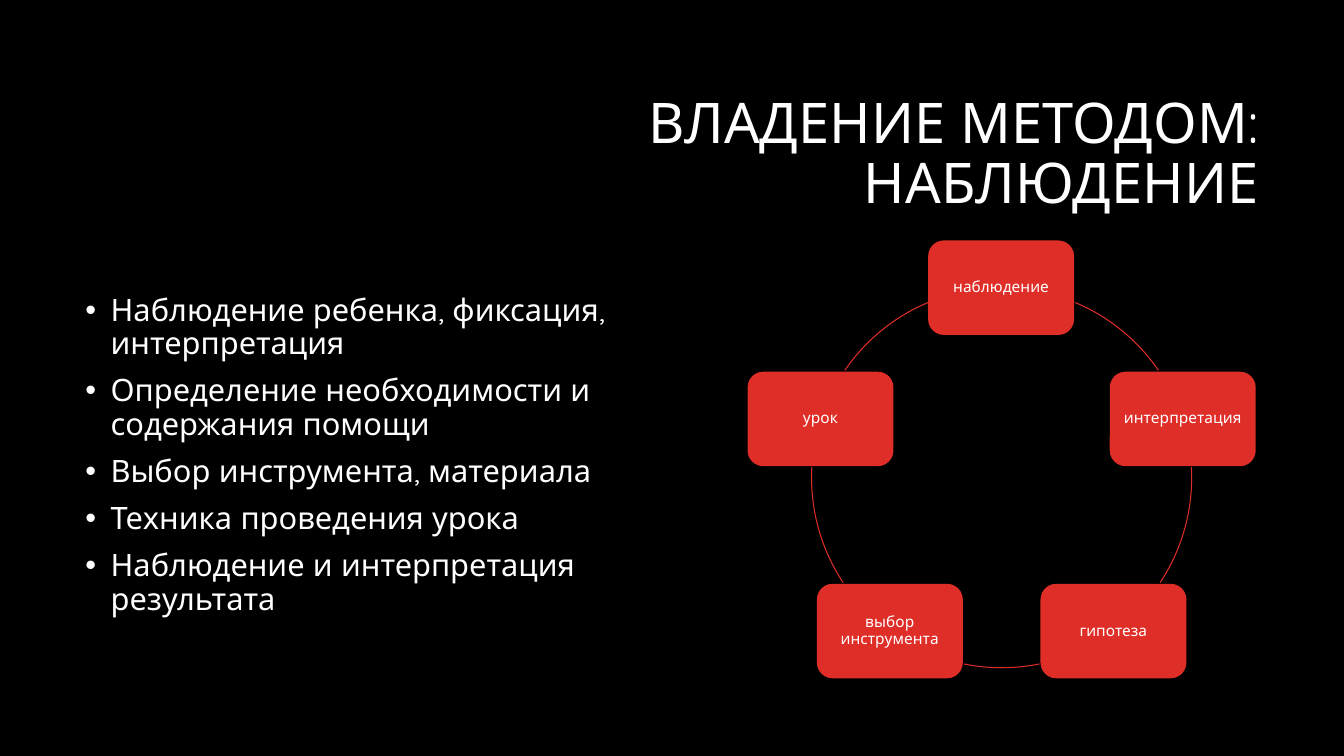
"""Build a slide with a bullet list and a five-step observation cycle."""
from math import cos, radians, sin

from lxml import etree
from pptx import Presentation
from pptx.dml.color import RGBColor
from pptx.enum.shapes import MSO_SHAPE as Shape
from pptx.enum.text import MSO_ANCHOR as Anchor, MSO_AUTO_SIZE as AutoSize, PP_ALIGN as Align
from pptx.oxml.ns import qn
from pptx.util import Pt

PX = 9525
WHITE, RED, BLACK = "FFFFFF", "DF2E28", "000000"


def color(value):
    return RGBColor.from_string(value)


def write(para, text, size, align):
    para.alignment = align
    para.line_spacing = 0.9
    span = para.add_run()
    span.text = text
    span.font.name = "Quicksand"
    span.font.size = Pt(size)
    span.font.color.rgb = color(WHITE)


deck = Presentation()
deck.slide_width, deck.slide_height = 1280 * PX, 720 * PX
page = deck.slides.add_slide(deck.slide_layouts[5])
page.background.fill.solid()
page.background.fill.fore_color.rgb = color(BLACK)

title = page.shapes.title
title.left, title.top, title.width, title.height = 304 * PX, 80 * PX, 904 * PX, 136 * PX
frame = title.text_frame
frame.word_wrap = True
frame.auto_size = AutoSize.NONE
frame.vertical_anchor = Anchor.MIDDLE
write(frame.paragraphs[0], "ВЛАДЕНИЕ МЕТОДОМ: НАБЛЮДЕНИЕ", 40, Align.RIGHT)

points = [
    "Наблюдение ребенка, фиксация, интерпретация",
    "Определение необходимости и содержания помощи",
    "Выбор инструмента, материала",
    "Техника проведения урока",
    "Наблюдение и интерпретация результата",
]
box = page.shapes.add_textbox(72 * PX, 276 * PX, 558 * PX, 377 * PX)
frame = box.text_frame
frame.word_wrap = True
for index, point in enumerate(points):
    para = frame.add_paragraph() if index else frame.paragraphs[0]
    props = para._p.get_or_add_pPr()
    props.set("marL", str(24 * PX))
    props.set("indent", str(-24 * PX))
    etree.SubElement(props, qn("a:buFont")).set("typeface", "Arial")
    etree.SubElement(props, qn("a:buChar")).set("char", "•")
    if index:
        para.space_before = Pt(10)
    write(para, point, 22, Align.LEFT)

center_x, center_y, radius = 954, 455, 181
node_width, node_height = 139, 90
steps = [
    ("наблюдение", 292.8, 325.6),
    ("интерпретация", 356.8, 33.5),
    ("гипотеза", 78.5, 101.5),
    ("выбор инструмента", 146.5, 183.2),
    ("урок", 214.4, 247.2),
]
for index, (label, arc_start, arc_end) in enumerate(steps):
    angle = radians(360 / len(steps) * index - 90)
    left = round(center_x + radius * cos(angle) - node_width / 2)
    top = round(center_y + radius * sin(angle) - node_height / 2)
    node = page.shapes.add_shape(
        Shape.ROUNDED_RECTANGLE, left * PX, top * PX, node_width * PX, node_height * PX)
    node.shadow.inherit = False
    node.fill.solid()
    node.fill.fore_color.rgb = color(RED)
    node.line.fill.background()
    frame = node.text_frame
    frame.word_wrap = True
    frame.vertical_anchor = Anchor.MIDDLE
    frame.margin_left = frame.margin_right = frame.margin_top = frame.margin_bottom = 5 * PX
    write(frame.paragraphs[0], label, 11, Align.CENTER)

    arc = page.shapes.add_shape(
        Shape.ARC, (center_x - radius) * PX, (center_y - radius) * PX,
        2 * radius * PX, 2 * radius * PX)
    arc.shadow.inherit = False
    arc.adjustments[0] = arc_start * 0.6
    arc.adjustments[1] = arc_end * 0.6
    arc.fill.background()
    arc.line.color.rgb = color(RED)
    arc.line.width = Pt(0.75)

deck.save("out.pptx")
